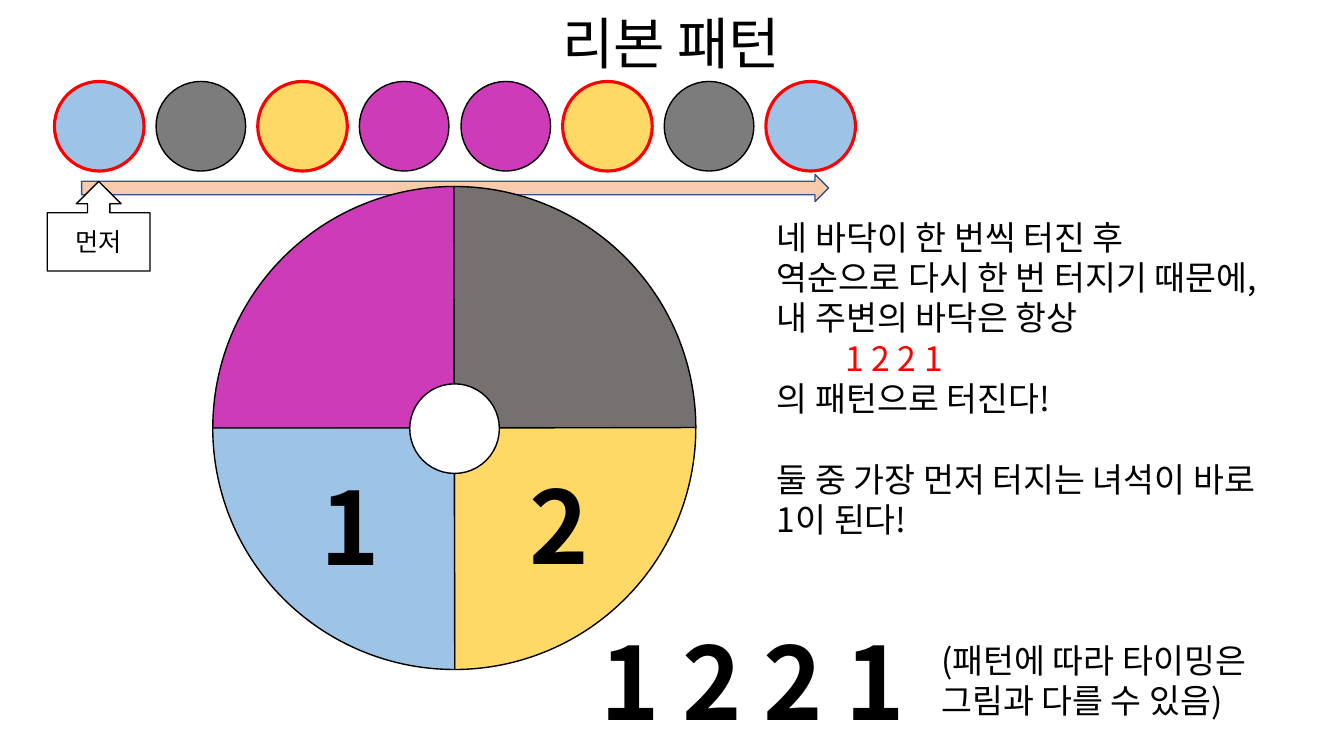
from dataclasses import dataclass
from typing import Optional

from lxml.etree import SubElement
from pptx import Presentation
from pptx.dml.color import RGBColor
from pptx.enum.shapes import MSO_SHAPE as Kind
from pptx.enum.text import MSO_ANCHOR as Anchor, MSO_AUTO_SIZE as Fit, PP_ALIGN as Align
from pptx.oxml.ns import qn
from pptx.util import Pt

FONT = "Noto Sans CJK KR"
LINE_HEIGHT = 1.2
BLACK, WHITE, RED = "000000", "FFFFFF", "FF0000"
PINK, GRAY, DARK_GRAY = "CD3BB8", "7C7C7C", "767171"
YELLOW, BLUE = "FFD966", "9DC3E6"


@dataclass
class Area:
    left: float
    top: float
    width: float
    height: float


@dataclass
class Line:
    text: str
    color: str = BLACK
    indent: float = 0
    space_before: float = 0


@dataclass
class Digit:
    text: str
    left: float
    top: float


def rgb(color: str) -> RGBColor:
    return RGBColor.from_string(color)


def add_figure(page, kind, area: Area, fill: str, outline: str = BLACK, weight: float = 1):
    figure = page.shapes.add_shape(
        kind, Pt(area.left), Pt(area.top), Pt(area.width), Pt(area.height))
    figure.shadow.inherit = False
    figure.fill.solid()
    figure.fill.fore_color.rgb = rgb(fill)
    figure.line.color.rgb = rgb(outline)
    figure.line.width = Pt(weight)
    return figure


def write_lines(frame, lines: list[Line], size: float, align, bold: bool = False) -> None:
    frame.text = "\n".join(line.text for line in lines)
    for para, line in zip(frame.paragraphs, lines):
        para.alignment = align
        para.line_spacing = Pt(size * LINE_HEIGHT)
        para.space_before = Pt(line.space_before)
        if line.indent:
            para._p.get_or_add_pPr().set("marL", str(Pt(line.indent)))
        for span in para.runs:
            span.font.size = Pt(size)
            span.font.bold = bold
            span.font.name = FONT
            span.font.color.rgb = rgb(line.color)
            SubElement(span.font._element, qn("a:ea")).set("typeface", FONT)


def add_text(page, area: Area, lines: list[Line], size: float,
             align: Optional[Align] = Align.LEFT, bold: bool = False, wrap: bool = False) -> None:
    box = page.shapes.add_textbox(
        Pt(area.left), Pt(area.top), Pt(area.width), Pt(area.height))
    frame = box.text_frame
    frame.word_wrap = wrap
    frame.auto_size = Fit.NONE
    write_lines(frame, lines, size, align, bold)


def build_page(page) -> None:
    # Direction arrow
    arrow = Area(58.3, 124.6, 533.5, 19.4)
    add_figure(page, Kind.RIGHT_ARROW, arrow, "F8CBAD", "325491")

    # Wheel of four quarters, clockwise from the upper left
    for turn, color in enumerate([PINK, DARK_GRAY, YELLOW, BLUE]):
        quarter = add_figure(page, Kind.PIE, Area(152, 133.2, 345, 345), color)
        quarter.adjustments[0] = 107.93
        quarter.adjustments[1] = 162
        quarter.rotation = 90 * turn
    add_figure(page, Kind.OVAL, Area(292.7, 274.2, 64, 64), WHITE)

    # Large digits on the wheel and in the pattern below
    digits = [Digit("1", 221.8, 328.3), Digit("2", 370.8, 327.6)]
    digits += [Digit(text, 421.9 + 58.3 * place, 439.2)
               for place, text in enumerate("1221")]
    for digit in digits:
        area = Area(digit.left, digit.top, 56.9, 94.3)
        add_text(page, area, [Line(digit.text)], 72, Align.CENTER, bold=True)

    # Row of circles, the same forwards and backwards
    half = [BLUE, GRAY, YELLOW, PINK]
    for place, color in enumerate(half + half[::-1]):
        marked = color in (BLUE, YELLOW)
        add_figure(page, Kind.OVAL, Area(38.9 + 72.6 * place, 58.2, 64, 64), color,
                   RED if marked else BLACK, 2.25 if marked else 1)

    # Title and explanations
    add_text(page, Area(384.5, 2.9, 190, 55.4), [Line("리본 패턴")], 40, Align.CENTER)
    explanation = [
        Line("네 바닥이 한 번씩 터진 후"),
        Line("역순으로 다시 한 번 터지기 때문에,"),
        Line("내 주변의 바닥은 항상"),
        Line("1 2 2 1", RED, indent=49),
        Line("의 패턴으로 터진다!"),
        Line("둘 중 가장 먼저 터지는 녀석이 바로", space_before=28.8),
        Line("1이 된다!"),
    ]
    add_text(page, Area(547.9, 151.2, 405.4, 239.8), explanation, 24)
    timing = [Line("(패턴에 따라 타이밍은"), Line("그림과 다를 수 있음)")]
    add_text(page, Area(665.3, 453.6, 272.2, 65.5), timing, 24, wrap=True)

    # Callout for the first circle
    callout = add_figure(page, Kind.UP_ARROW_CALLOUT, Area(33.8, 129.6, 73.4, 64), WHITE)
    callout.text_frame.vertical_anchor = Anchor.MIDDLE
    write_lines(callout.text_frame, [Line("먼저")], 18, Align.CENTER)


def main() -> None:
    deck = Presentation()
    deck.slide_width, deck.slide_height = Pt(960), Pt(540)
    build_page(deck.slides.add_slide(deck.slide_layouts[6]))
    deck.save("out.pptx")


if __name__ == "__main__":
    main()
